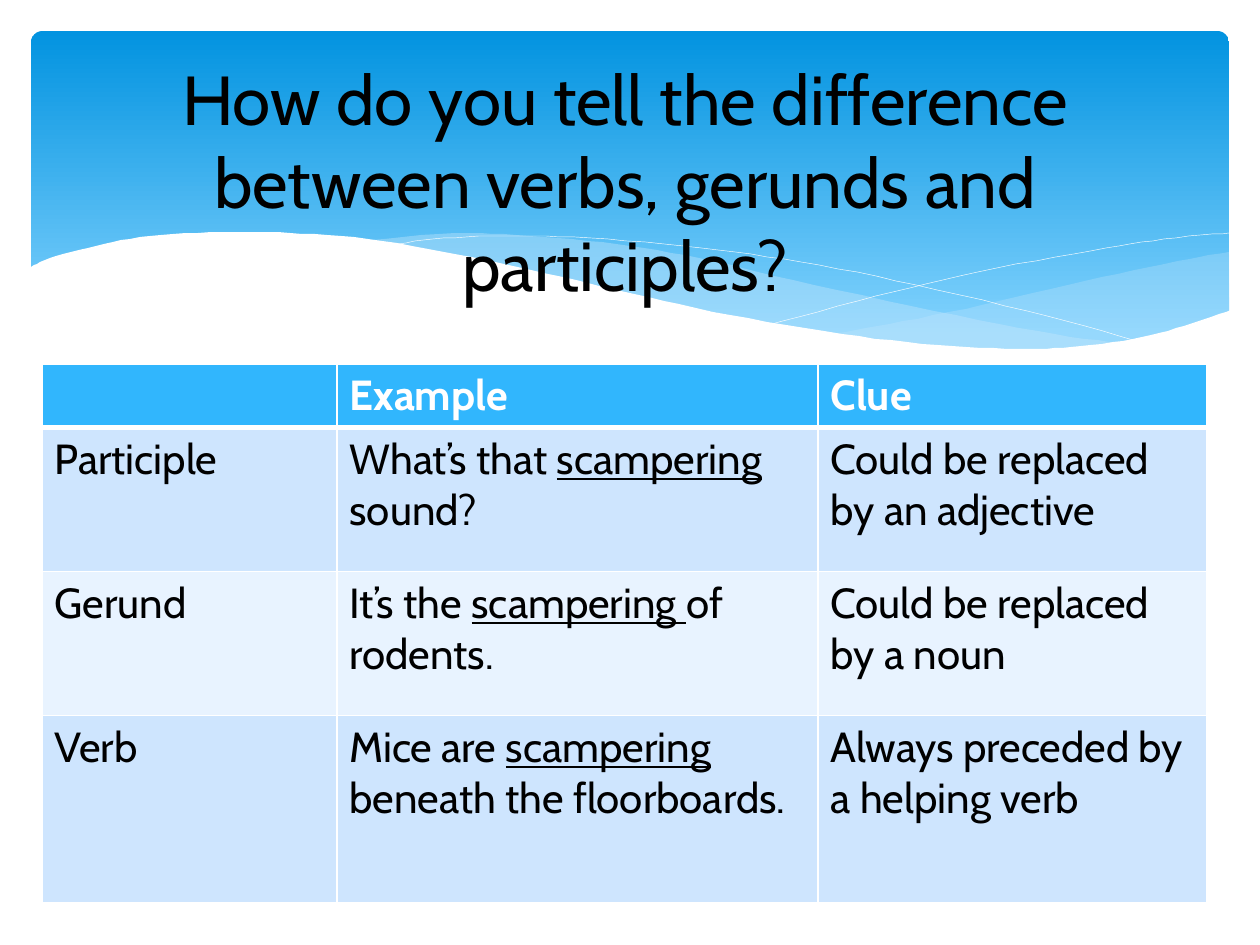
from dataclasses import dataclass
from itertools import pairwise

from lxml.etree import SubElement
from pptx import Presentation
from pptx.dml.color import RGBColor
from pptx.enum.shapes import MSO_SHAPE
from pptx.enum.text import MSO_ANCHOR, PP_ALIGN
from pptx.oxml.ns import qn
from pptx.util import Emu, Pt

EMU_PER_PX = 914400 / 126
CURVE_STEPS = 6
Point = tuple[float, float]


@dataclass(frozen=True)
class Theme:
    font: str = "Cabin"
    title_size: float = 39.6
    table_size: float = 24
    hairline: float = 0.25
    border: float = 1
    header_rule: float = 3
    white: str = "FFFFFF"
    ink: str = "000000"
    sky_top: str = "0293E0"
    sky_bottom: str = "83D3FE"
    wave: str = "C6E7FC"
    header: str = "31B6FD"
    bands: tuple[str, str] = ("CEE5FE", "E8F3FF")


@dataclass(frozen=True)
class Wave:
    edges: tuple[tuple[Point, ...], ...]
    fill: str | None = None
    opacity: int = 100


@dataclass(frozen=True)
class Row:
    cells: tuple[str, str, str]
    height: int


THEME = Theme()

WAVES = (
    Wave((
        ((1229, 252), (1178, 261), (1085, 281), (982, 305), (890, 324), (833, 334)),
        ((833, 334), (906, 343), (969, 349), (1038, 350), (1099, 345),
         (1150, 336), (1196, 324), (1230, 311)),
    ), THEME.wave, 29),
    Wave((
        ((1125, 344), (1055, 334), (934, 311), (793, 280), (699, 258),
         (616, 244), (529, 236), (455, 233), (360, 241)),
        ((360, 241), (456, 256), (566, 280), (668, 302), (757, 321),
         (857, 338), (942, 348), (1031, 350), (1125, 344)),
    ), THEME.wave, 40),
    Wave((
        ((389, 246), (433, 239), (505, 236), (591, 238), (701, 248),
         (801, 262), (916, 285), (1047, 316), (1143, 343)),
    )),
    Wave((
        ((772, 324), (876, 296), (978, 272), (1091, 251), (1164, 239), (1229, 233)),
    )),
    Wave((
        ((1231, 310), (1184, 326), (1133, 339), (1071, 347), (1019, 349),
         (937, 345), (842, 334), (730, 315), (634, 294), (563, 277),
         (460, 255), (368, 239), (290, 233), (223, 232), (150, 236),
         (96, 246), (50, 258), (29, 268)),
        ((29, 268), (29, 415)),
        ((29, 415), (1231, 415)),
    ), THEME.white),
)

COLUMN_WIDTHS = (295, 481, 389)
ROWS = (
    Row(("", "Example", "Clue"), 63),
    Row(("Participle", "What’s that _scampering_ sound?",
         "Could be replaced by an adjective"), 144),
    Row(("Gerund", "It’s the _scampering _of rodents.",
         "Could be replaced by a noun"), 144),
    Row(("Verb", "Mice are _scampering_ beneath the floorboards.",
         "Always preceded by a helping verb"), 187),
)


def px(length: float) -> Emu:
    return Emu(round(length * EMU_PER_PX))


def rgb(color: str) -> RGBColor:
    return RGBColor.from_string(color)


def write_text(frame, text: str, *, size: float, color: str, bold: bool = False,
               align: PP_ALIGN = PP_ALIGN.LEFT) -> None:
    frame.word_wrap = True
    paragraph = frame.paragraphs[0]
    paragraph.alignment = align
    for index, part in enumerate(text.split("_")):
        if part:
            run = paragraph.add_run()
            run.text = part
            run.font.name = THEME.font
            run.font.size = Pt(size)
            run.font.bold = bold
            run.font.underline = index % 2 == 1
            run.font.color.rgb = rgb(color)


def smooth(knots: tuple[Point, ...]) -> list[Point]:
    padded = (knots[0], *knots, knots[-1])
    points = [knots[0]]
    for index, (start, end) in enumerate(pairwise(knots)):
        before, after = padded[index], padded[index + 3]
        for step in range(1, CURVE_STEPS + 1):
            t = step / CURVE_STEPS
            points.append(tuple(
                b + t * (c - a) / 2
                + t**2 * (2 * a - 5 * b + 4 * c - d) / 2
                + t**3 * (3 * b - a - 3 * c + d) / 2
                for a, b, c, d in zip(before, start, end, after)
            ))
    return points


def draw_sky(shapes) -> None:
    sky = shapes.add_shape(MSO_SHAPE.ROUNDED_RECTANGLE, px(31), px(31), px(1198), px(340))
    sky.adjustments[0] = 0.034
    sky.shadow.inherit = False
    sky.line.fill.background()
    sky.fill.gradient()
    sky.fill.gradient_angle = 270
    colors = (THEME.sky_top, THEME.sky_bottom)
    for stop, color, position in zip(sky.fill.gradient_stops, colors, (0, 0.9)):
        stop.color.rgb = rgb(color)
        stop.position = position


def draw_wave(shapes, wave: Wave) -> None:
    points = [point for edge in wave.edges for point in smooth(edge)]
    builder = shapes.build_freeform(*points[0], scale=EMU_PER_PX)
    builder.add_line_segments(points[1:], close=wave.fill is not None)
    shape = builder.convert_to_shape()
    shape.shadow.inherit = False
    if wave.fill is None:
        shape.fill.background()
        shape.line.color.rgb = rgb(THEME.white)
        shape.line.width = Pt(THEME.hairline)
        return
    shape.line.fill.background()
    shape.fill.solid()
    shape.fill.fore_color.rgb = rgb(wave.fill)
    if wave.opacity < 100:
        color = shape.fill._xPr.find(f".//{qn('a:srgbClr')}")
        SubElement(color, qn("a:alpha"), val=str(wave.opacity * 1000))


def style_cell(cell, fill: str, top: float, bottom: float) -> None:
    properties = cell._tc.get_or_add_tcPr()
    widths = {"L": THEME.border, "R": THEME.border, "T": top, "B": bottom}
    for side, width in widths.items():
        border = SubElement(properties, qn(f"a:ln{side}"), w=str(Pt(width)))
        paint = SubElement(border, qn("a:solidFill"))
        SubElement(paint, qn("a:srgbClr"), val=THEME.white)
    cell.fill.solid()
    cell.fill.fore_color.rgb = rgb(fill)


def draw_table(shapes) -> None:
    table = shapes.add_table(
        len(ROWS), len(COLUMN_WIDTHS), px(42), px(364),
        px(sum(COLUMN_WIDTHS)), px(sum(row.height for row in ROWS)),
    ).table
    for column, width in zip(table.columns, COLUMN_WIDTHS):
        column.width = px(width)
    for index, row in enumerate(ROWS):
        heading = index == 0
        table.rows[index].height = px(row.height)
        fill = THEME.header if heading else THEME.bands[(index - 1) % 2]
        top = THEME.header_rule if index == 1 else THEME.border
        bottom = THEME.header_rule if heading else THEME.border
        for cell, text in zip(table.rows[index].cells, row.cells):
            style_cell(cell, fill, top, bottom)
            write_text(cell.text_frame, text, size=THEME.table_size, bold=heading,
                       color=THEME.white if heading else THEME.ink)


def main() -> None:
    deck = Presentation()
    deck.slide_width, deck.slide_height = px(1260), px(945)
    shapes = deck.slides.add_slide(deck.slide_layouts[6]).shapes
    draw_sky(shapes)
    for wave in WAVES:
        draw_wave(shapes, wave)
    draw_table(shapes)
    title = shapes.add_textbox(px(53), px(47), px(1144), px(268)).text_frame
    title.vertical_anchor = MSO_ANCHOR.MIDDLE
    write_text(title, "How do you tell the difference between verbs, gerunds and participles?",
               size=THEME.title_size, color=THEME.ink, align=PP_ALIGN.CENTER)
    deck.save("out.pptx")


if __name__ == "__main__":
    main()
